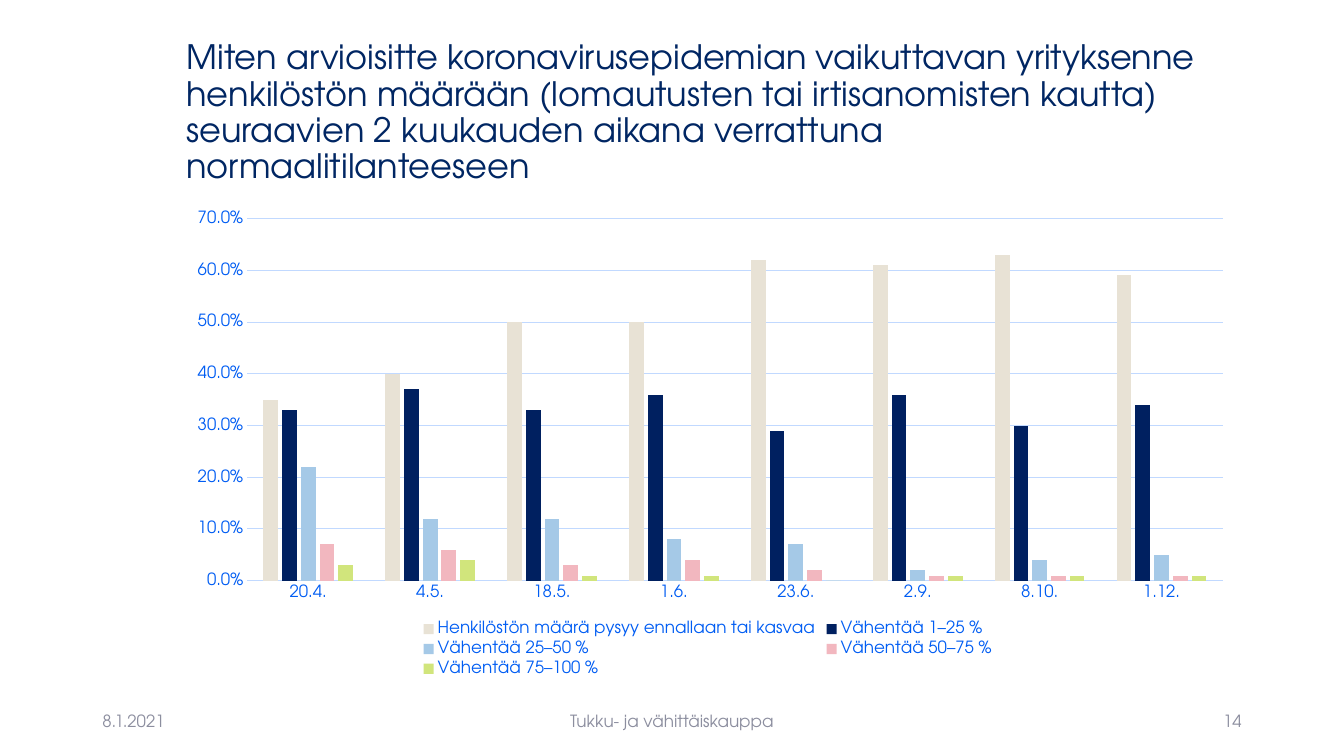
from pptx import Presentation
from pptx.chart.data import CategoryChartData
from pptx.dml.color import RGBColor
from pptx.enum.chart import XL_CHART_TYPE, XL_LEGEND_POSITION, XL_TICK_MARK
from pptx.enum.text import MSO_ANCHOR, MSO_AUTO_SIZE, PP_ALIGN
from pptx.util import Pt

NAVY = RGBColor(0x00, 0x26, 0x63)
BLUE = RGBColor(0x00, 0x5D, 0xF3)
PALE_BLUE = RGBColor(0xC1, 0xD9, 0xFF)
GRAY = RGBColor(0x8C, 0x8E, 0x9F)
SAND = RGBColor(0xE8, 0xE2, 0xD5)
DARK_BLUE = RGBColor(0x00, 0x20, 0x60)
SKY = RGBColor(0xA5, 0xC9, 0xE7)
PINK = RGBColor(0xF2, 0xB7, 0xBF)
LIME = RGBColor(0xD1, 0xE5, 0x7C)

QUESTION = (
    "Miten arvioisitte koronavirusepidemian vaikuttavan yrityksenne henkilöstön määrään "
    "(lomautusten tai irtisanomisten kautta) seuraavien 2 kuukauden aikana verrattuna "
    "normaalitilanteeseen"
)
SURVEY_DATES = ["20.4.", "4.5.", "18.5.", "1.6.", "23.6.", "2.9.", "8.10.", "1.12."]
ANSWERS = [
    ("Henkilöstön määrä pysyy ennallaan tai kasvaa", SAND,
     [0.35, 0.4, 0.5, 0.5, 0.62, 0.61, 0.63, 0.59]),
    ("Vähentää 1–25 % ", DARK_BLUE,
     [0.33, 0.37, 0.33, 0.36, 0.29, 0.36, 0.3, 0.34]),
    ("Vähentää 25–50 % ", SKY,
     [0.22, 0.12, 0.12, 0.08, 0.07, 0.02, 0.04, 0.05]),
    ("Vähentää 50–75 % ", PINK,
     [0.07, 0.06, 0.03, 0.04, 0.02, 0.01, 0.01, 0.01]),
    ("Vähentää 75–100 % ", LIME,
     [0.03, 0.04, 0.01, 0.01, 0, 0.01, 0.01, 0.01]),
]
FOOTER = [
    ("8.1.2021", 66, 216, PP_ALIGN.LEFT),
    ("Tukku- ja vähittäiskauppa", 318, 324, PP_ALIGN.CENTER),
    ("14", 678, 216, PP_ALIGN.RIGHT),
]


def style_font(font, size, color):
    font.name = "TeX Gyre Adventor"
    font.size = Pt(size)
    font.color.rgb = color


def write(frame, text, *, size=12, color=GRAY, align=PP_ALIGN.LEFT, line_spacing=1.0):
    frame.word_wrap = True
    frame.auto_size = MSO_AUTO_SIZE.NONE
    frame.vertical_anchor = MSO_ANCHOR.MIDDLE
    paragraph = frame.paragraphs[0]
    paragraph.alignment = align
    paragraph.line_spacing = line_spacing
    run = paragraph.add_run()
    run.text = text
    style_font(run.font, size, color)


class SurveySlide:
    """Hold the slide and its style, and add each kind of element."""

    def __init__(self, deck):
        self.slide = deck.slides.add_slide(deck.slide_layouts[5])
        self.label_size = 12
        self.label_color = BLUE
        self.rule_color = PALE_BLUE

    def title(self, text, left, top, width, height):
        heading = self.slide.shapes.title
        heading.left, heading.top = Pt(left), Pt(top)
        heading.width, heading.height = Pt(width), Pt(height)
        write(heading.text_frame, text, size=24, color=NAVY, line_spacing=0.9)

    def label(self, text, left, top, width, height, align):
        box = self.slide.shapes.add_textbox(Pt(left), Pt(top), Pt(width), Pt(height))
        write(box.text_frame, text, align=align)

    def rule(self, line):
        line.color.rgb = self.rule_color
        line.width = Pt(0.75)

    def columns(self, categories, answers, left, top, width, height):
        data = CategoryChartData(number_format="0.0%")
        data.categories = categories
        for name, _, shares in answers:
            data.add_series(name, shares)
        chart = self.slide.shapes.add_chart(
            XL_CHART_TYPE.COLUMN_CLUSTERED, Pt(left), Pt(top), Pt(width), Pt(height), data
        ).chart
        style_font(chart.font, 10, NAVY)
        chart.has_title = False
        chart.has_legend = True
        chart.legend.position = XL_LEGEND_POSITION.BOTTOM
        chart.legend.include_in_layout = False
        style_font(chart.legend.font, self.label_size, self.label_color)

        plot = chart.plots[0]
        plot.gap_width, plot.overlap = 219, -27
        plot.vary_by_categories = False
        for series, (_, color, _) in zip(plot.series, answers):
            series.invert_if_negative = False
            series.format.fill.solid()
            series.format.fill.fore_color.rgb = color

        dates, shares = chart.category_axis, chart.value_axis
        for axis in (dates, shares):
            axis.major_tick_mark = axis.minor_tick_mark = XL_TICK_MARK.NONE
            style_font(axis.tick_labels.font, self.label_size, self.label_color)
        self.rule(dates.format.line)
        self.rule(shares.major_gridlines.format.line)
        shares.format.line.fill.background()
        shares.minimum_scale, shares.maximum_scale, shares.major_unit = 0, 0.7, 0.1
        shares.tick_labels.number_format = "0.0%"
        shares.tick_labels.number_format_is_linked = False


def main():
    deck = Presentation()
    deck.slide_width, deck.slide_height = Pt(960), Pt(540)
    page = SurveySlide(deck)
    page.title(QUESTION, 126, 28.8, 762.5, 104.4)
    page.columns(SURVEY_DATES, ANSWERS, 126, 143.7, 762.5, 342.5)
    for text, left, width, align in FOOTER:
        page.label(text, left, 500.4, width, 28.8, align)
    deck.save("out.pptx")


if __name__ == "__main__":
    main()
